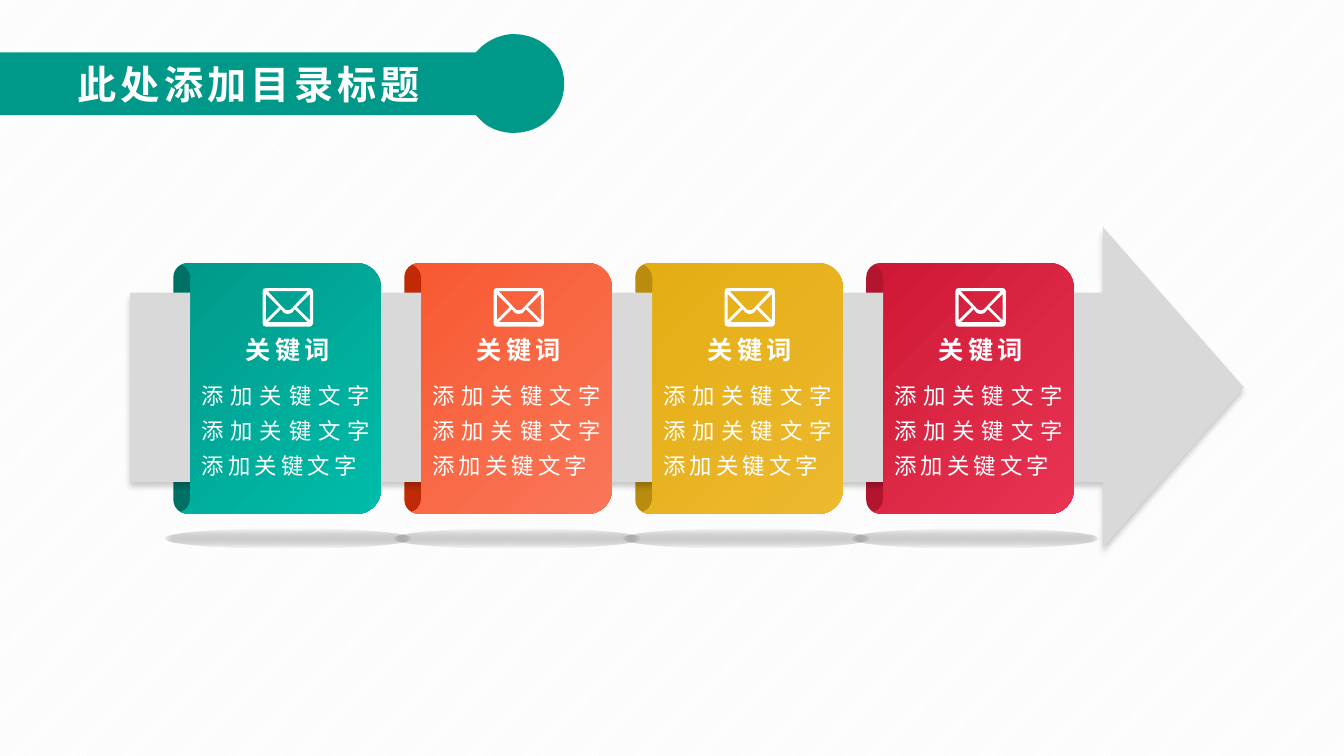
import pptx
import pptx.util
import pptx.dml.color
import pptx.enum.dml
import pptx.enum.shapes
import pptx.enum.text
import pptx.oxml
import pptx.oxml.ns

Cm = pptx.util.Cm
Pt = pptx.util.Pt
PRESET = pptx.enum.shapes.MSO_SHAPE
ALIGN = pptx.enum.text.PP_ALIGN

FONT = "Noto Sans CJK SC"
COLORS = {
    "white": "FFFFFF",
    "stripe": "F2F2F2",
    "arrow": "D9D9D9",
    "banner": "009989",
}
CARDS = [
    {"fold": "007065", "start": "009989", "end": "00BCAA"},
    {"fold": "C12A07", "start": "F85931", "end": "F97759"},
    {"fold": "B98C0F", "start": "E3AD13", "end": "EDB92E"},
    {"fold": "B3152F", "start": "CE1836", "end": "E83452"},
]
CARD_PITCH = 5.82
SHADOW_PITCH = 5.77

BANNER = [
    (12.95, 0.86),
    (13.67, 0.86, 14.22, 1.42, 14.22, 2.11),
    (14.22, 2.79, 13.67, 3.35, 12.95, 3.35),
    (12.62, 3.35, 12.29, 3.23, 12.09, 3),
    (11.99, 2.9), (0, 2.9), (0, 1.32), (11.99, 1.32), (12.09, 1.22),
    (12.29, 1.02, 12.62, 0.86, 12.95, 0.86),
]
CARD = [
    (0.23, 0), (4.42, 0),
    (4.75, 0, 5.03, 0.27, 5.03, 0.61),
    (5.03, 5.71),
    (5.03, 6.05, 4.75, 6.32, 4.42, 6.32),
    (0.23, 6.32),
    (0.15, 6.32, 0.08, 6.3, 0, 6.27),
    (0.15, 6.22, 0.23, 6.07, 0.23, 5.92),
    (0.23, 0.41),
    (0.23, 0.25, 0.15, 0.1, 0, 0.04),
    (0.08, 0.01, 0.15, 0, 0.23, 0),
]
ENVELOPE = [
    [(0.08, 0), (1.19, 0), (1.24, 0.02), (1.27, 0.08), (1.27, 0.89), (1.24, 0.95),
     (1.19, 0.97), (0.08, 0.97), (0.02, 0.95), (0, 0.89), (0, 0.08), (0.02, 0.02)],
    [(0.41, 0.48), (0.08, 0.15), (0.08, 0.81)],
    [(1.19, 0.15), (0.86, 0.48), (1.19, 0.81)],
    [(1.14, 0.08), (0.13, 0.08), (0.53, 0.51), (0.58, 0.55), (0.63, 0.56),
     (0.69, 0.55), (0.74, 0.51)],
    [(1.14, 0.86), (0.81, 0.53), (0.75, 0.61), (0.7, 0.64), (0.63, 0.65),
     (0.57, 0.64), (0.52, 0.61), (0.46, 0.53), (0.13, 0.86)],
]
SHADOW_FILL = (
    '<a:gradFill %s rotWithShape="1"><a:gsLst>'
    '<a:gs pos="0"><a:srgbClr val="808080"><a:alpha val="38000"/></a:srgbClr></a:gs>'
    '<a:gs pos="100000"><a:srgbClr val="000000"><a:alpha val="0"/></a:srgbClr></a:gs>'
    '</a:gsLst><a:path path="shape">'
    '<a:fillToRect l="50000" t="50000" r="50000" b="50000"/></a:path></a:gradFill>'
)
ARROW_SHADOW = (
    '<a:outerShdw %s blurRad="50800" dist="50800" dir="5400000" algn="t" rotWithShape="0">'
    '<a:srgbClr val="000000"><a:alpha val="20000"/></a:srgbClr></a:outerShdw>'
)


def rgb(value):
    return pptx.dml.color.RGBColor.from_string(value)


def parse_drawing(template):
    return pptx.oxml.parse_xml(template % pptx.oxml.ns.nsdecls("a"))


def paint(shape, color):
    shape.shadow.inherit = False
    shape.line.fill.background()
    shape.fill.solid()
    shape.fill.fore_color.rgb = rgb(color)


def paint_gradient(shape, start, end):
    paint(shape, start)
    shape.fill.gradient()
    shape.fill.gradient_angle = 315
    for stop, color in zip(shape.fill.gradient_stops, (start, end)):
        stop.color.rgb = rgb(color)


def flatten(segments, steps=12):
    points = [segments[0]]
    for segment in segments[1:]:
        if len(segment) == 2:
            points.append(segment)
            continue
        x0, y0 = points[-1]
        x1, y1, x2, y2, x3, y3 = segment
        for step in range(1, steps + 1):
            t = step / steps
            a, b, c, d = (1 - t) ** 3, 3 * t * (1 - t) ** 2, 3 * t * t * (1 - t), t ** 3
            points.append((a * x0 + b * x1 + c * x2 + d * x3,
                           a * y0 + b * y1 + c * y2 + d * y3))
    return points


def add_outline(shapes, contours, left=0, top=0):
    loops = [[(x * 1000, y * 1000) for x, y in flatten(contour)] for contour in contours]
    builder = shapes.build_freeform(*loops[0][0], scale=Cm(0.001))
    builder.add_line_segments(loops[0][1:])
    for loop in loops[1:]:
        builder.move_to(*loop[0])
        builder.add_line_segments(loop[1:])
    return builder.convert_to_shape(Cm(left), Cm(top))


def add_preset(shapes, preset, left, top, width, height, color):
    shape = shapes.add_shape(preset, Cm(left), Cm(top), Cm(width), Cm(height))
    paint(shape, color)
    return shape


def write(holder, text, size, align, bold=False, spacing=1.0):
    frame = holder.text_frame
    frame.word_wrap = True
    frame.auto_size = pptx.enum.text.MSO_AUTO_SIZE.SHAPE_TO_FIT_TEXT
    frame.vertical_anchor = pptx.enum.text.MSO_ANCHOR.TOP
    frame.text = text
    paragraph = frame.paragraphs[0]
    paragraph.alignment = align
    paragraph.line_spacing = spacing
    font = paragraph.font
    font.size = Pt(size)
    font.bold = bold
    font.color.rgb = rgb(COLORS["white"])
    font.name = FONT
    defaults = paragraph._p.get_or_add_pPr().get_or_add_defRPr()
    defaults.set("spc", "300")
    defaults.append(parse_drawing('<a:ea %s typeface="' + FONT + '"/>'))


def add_text(shapes, left, top, width, height, *content, **style):
    holder = shapes.add_textbox(Cm(left), Cm(top), Cm(width), Cm(height))
    write(holder, *content, **style)


def add_ground_shadow(shapes, left):
    ground = add_preset(shapes, PRESET.OVAL, left, 13.31, 6.22, 0.51, COLORS["arrow"])
    properties = ground._element.spPr
    properties.replace(properties.find(pptx.oxml.ns.qn("a:solidFill")),
                       parse_drawing(SHADOW_FILL))


def add_arrow(shapes):
    arrow = add_preset(shapes, PRESET.RIGHT_ARROW, 3.28, 5.72, 28.07, 8.08, COLORS["arrow"])
    arrow.adjustments[0] = 0.59
    arrow.adjustments[1] = 0.44
    effects = arrow._element.spPr.find(pptx.oxml.ns.qn("a:effectLst"))
    effects.append(parse_drawing(ARROW_SHADOW))


def add_keyword(shapes, offset):
    keyword = shapes.add_group_shape().shapes
    paint(add_outline(keyword, ENVELOPE, 6.62 + offset, 7.26), COLORS["white"])
    add_text(keyword, 5.82 + offset, 8.31, 2.87, 1.02, "关键词", 18, ALIGN.CENTER, bold=True)
    add_text(keyword, 4.83 + offset, 9.3, 4.85, 2.9, "添加关键文字" * 3, 16,
             ALIGN.JUSTIFY, spacing=1.3)


def add_heading(slide):
    paint(add_outline(slide.shapes, [BANNER]), COLORS["banner"])
    title = slide.shapes.title
    title.left, title.top, title.width, title.height = Cm(1.7), Cm(1.4), Cm(9.98), Cm(1.45)
    write(title, "此处添加目录标题", 28, ALIGN.LEFT, bold=True)
    slide.shapes._spTree.append(title._element)


def set_background(slide):
    fill = slide.background.fill
    fill.patterned()
    fill.pattern = pptx.enum.dml.MSO_PATTERN.LIGHT_UPWARD_DIAGONAL
    fill.fore_color.rgb = rgb(COLORS["stripe"])
    fill.back_color.rgb = rgb(COLORS["white"])


def main():
    deck = pptx.Presentation()
    deck.slide_width, deck.slide_height = Cm(33.87), Cm(19.05)
    slide = deck.slides.add_slide(deck.slide_layouts[5])
    shapes = slide.shapes
    set_background(slide)
    for index, card in enumerate(CARDS):
        fold = add_preset(shapes, PRESET.ROUNDED_RECTANGLE, 4.37 + index * CARD_PITCH, 6.63,
                          0.71, 6.32, card["fold"])
        fold.adjustments[0] = 0.5
    add_arrow(shapes)
    for index, card in enumerate(CARDS):
        offset = index * CARD_PITCH
        front = add_outline(shapes, [CARD], 4.57 + offset, 6.63)
        paint_gradient(front, card["start"], card["end"])
        add_keyword(shapes, offset)
        add_ground_shadow(shapes, 4.14 + index * SHADOW_PITCH)
    add_heading(slide)
    deck.save("out.pptx")


if __name__ == "__main__":
    main()
